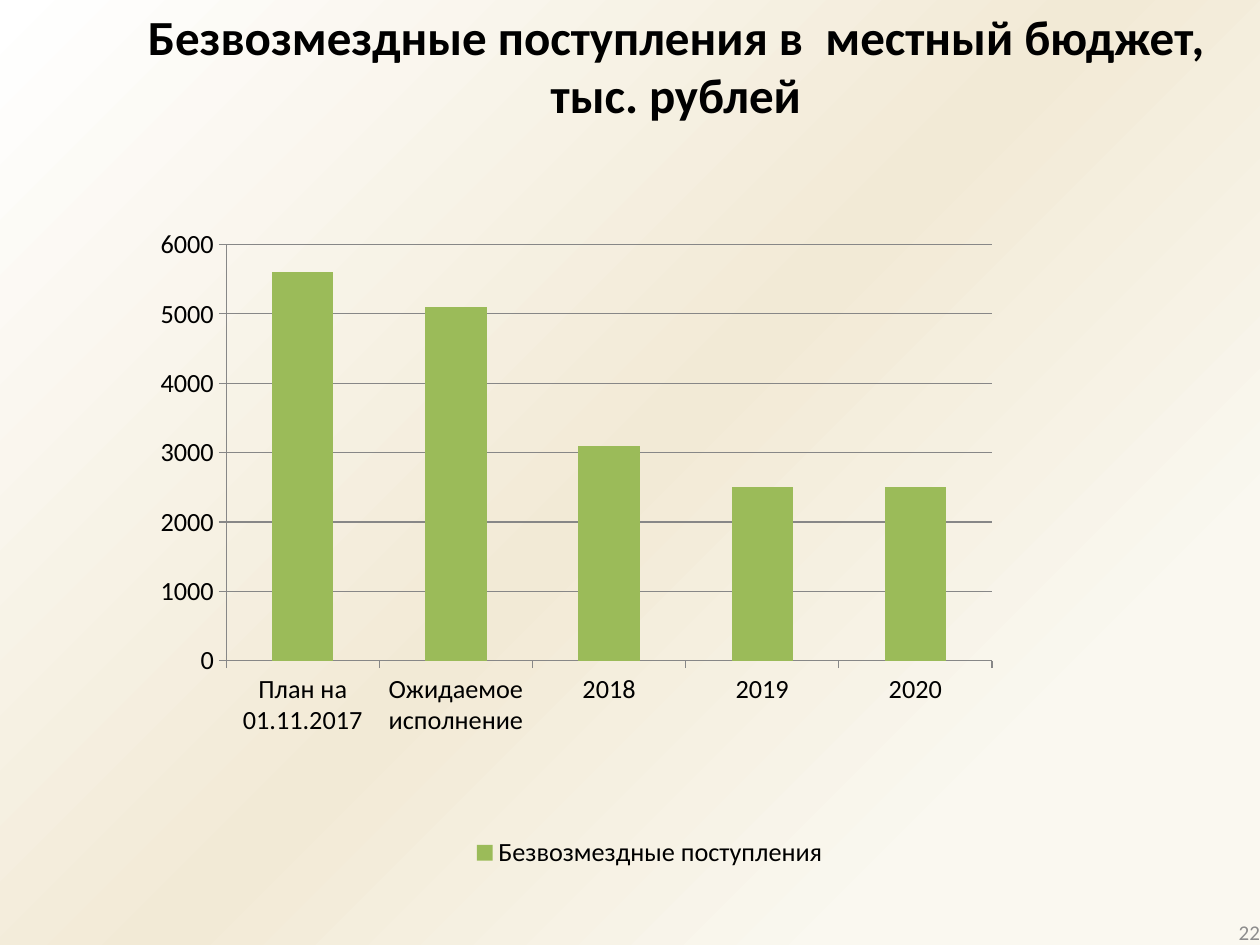
from lxml.etree import SubElement
from pptx import Presentation
from pptx.chart.data import CategoryChartData
from pptx.dml.color import RGBColor
from pptx.enum.chart import XL_CHART_TYPE as ChartType
from pptx.enum.chart import XL_LEGEND_POSITION as LegendPosition
from pptx.enum.chart import XL_TICK_MARK as TickMark
from pptx.enum.text import MSO_ANCHOR as Anchor
from pptx.enum.text import PP_ALIGN as Align
from pptx.oxml.ns import qn
from pptx.util import Cm, Pt

COLORS = {
    "text": "000000",
    "number": "8C8C8C",
    "income": "9BBB59",
    "axis": "878787",
    "cream": "FAF8F0",
    "sand": "F2EAD6",
    "white": "FFFFFF",
}
FONT = "Calibri"
INCOME = {
    "План на 01.11.2017": 5600,
    "Ожидаемое исполнение": 5100,
    "2018": 3100,
    "2019": 2500,
    "2020": 2500,
}


def color(key):
    """Return the named palette colour."""
    return RGBColor.from_string(COLORS[key])


def style_font(font, size, key="text", bold=False):
    """Set the typeface, size, colour and weight of a font."""
    font.name, font.size, font.bold = FONT, Pt(size), bold
    font.color.rgb = color(key)


def paint_background(slide):
    """Fill the background with a gradient spreading from the lower right corner."""
    slide.background.fill.gradient()
    gradient = next(slide.element.iter(qn("a:gradFill")))
    for part in list(gradient):
        gradient.remove(part)
    stops = SubElement(gradient, qn("a:gsLst"))
    for percent, key in ((19, "cream"), (50, "sand"), (100, "white")):
        stop = SubElement(stops, qn("a:gs"), pos=str(percent * 1000))
        SubElement(stop, qn("a:srgbClr"), val=COLORS[key])
    spread = SubElement(gradient, qn("a:path"), path="circle")
    SubElement(spread, qn("a:fillToRect"), l="100000", t="100000")


def add_line(slide, box, text, align, size, key="text", bold=False):
    """Add a wrapping one-paragraph text box and return its frame."""
    frame = slide.shapes.add_textbox(*box).text_frame
    frame.word_wrap = True
    paragraph = frame.paragraphs[0]
    paragraph.alignment = align
    run = paragraph.add_run()
    run.text = text
    style_font(run.font, size, key, bold)
    return frame


def add_title(slide, box):
    """Place the slide title in its box."""
    add_line(slide, box, "Безвозмездные поступления в  местный бюджет, тыс. рублей",
             Align.CENTER, 28, bold=True)


def add_page_number(slide, box):
    """Place the page number flush right in its box."""
    frame = add_line(slide, box, "22", Align.RIGHT, 12, "number")
    frame.vertical_anchor = Anchor.MIDDLE
    frame.margin_left = frame.margin_right = frame.margin_top = frame.margin_bottom = 0


def fix_layout(parent, predecessor, percents, inner=False):
    """Pin a chart part to percentages of the chart area."""
    for automatic in parent.findall(qn("c:layout")):
        parent.remove(automatic)
    layout = parent.makeelement(qn("c:layout"))
    if predecessor is None:
        parent.insert(0, layout)
    else:
        predecessor.addnext(layout)
    manual = SubElement(layout, qn("c:manualLayout"))
    if inner:
        SubElement(manual, qn("c:layoutTarget"), val="inner")
    for mode in ("xMode", "yMode"):
        SubElement(manual, qn(f"c:{mode}"), val="edge")
    for side, percent in zip("xywh", percents):
        SubElement(manual, qn(f"c:{side}"), val=str(percent / 100))


def add_income_chart(slide, box):
    """Place the column chart of grants in its box."""
    data = CategoryChartData()
    data.categories = INCOME.keys()
    data.add_series("Безвозмездные поступления", INCOME.values())
    chart = slide.shapes.add_chart(ChartType.COLUMN_CLUSTERED, *box, data).chart
    chart.has_title = False
    style_font(chart.font, 10)

    plot = chart.plots[0]
    plot.vary_by_categories = False
    plot.gap_width = 150
    columns = plot.series[0].format.fill
    columns.solid()
    columns.fore_color.rgb = color("income")

    years, amounts = chart.category_axis, chart.value_axis
    amounts.minimum_scale, amounts.maximum_scale, amounts.major_unit = 0, 6000, 1000
    amounts.has_major_gridlines = True
    for axis in (years, amounts):
        axis.major_tick_mark = TickMark.OUTSIDE
        style_font(axis.tick_labels.font, 15)
    for line in (years.format.line, amounts.format.line, amounts.major_gridlines.format.line):
        line.color.rgb = color("axis")
        line.width = Pt(0.75)

    chart.has_legend = True
    legend = chart.legend
    legend.position = LegendPosition.RIGHT
    legend.include_in_layout = False
    style_font(legend.font, 15)

    plot_area = next(chart.element.iter(qn("c:plotArea")))
    fix_layout(plot_area, None, (10.4, 5.1, 62.2, 56.4), inner=True)
    legend_area = next(chart.element.iter(qn("c:legend")))
    fix_layout(legend_area, legend_area.find(qn("c:legendPos")), (29.8, 84, 30, 7))


def main():
    """Build and save the slide."""
    deck = Presentation()
    deck.slide_width, deck.slide_height = Cm(25.4), Cm(19.05)
    slide = deck.slides.add_slide(deck.slide_layouts[6])
    paint_background(slide)
    add_title(slide, (Cm(1.85), Cm(0), Cm(23.55), Cm(1.32)))
    add_page_number(slide, (Cm(19.48), Cm(18.52), Cm(5.92), Cm(0.53)))
    add_income_chart(slide, (Cm(1.98), Cm(4.17), Cm(24.82), Cm(14.88)))
    deck.save("out.pptx")


if __name__ == "__main__":
    main()
